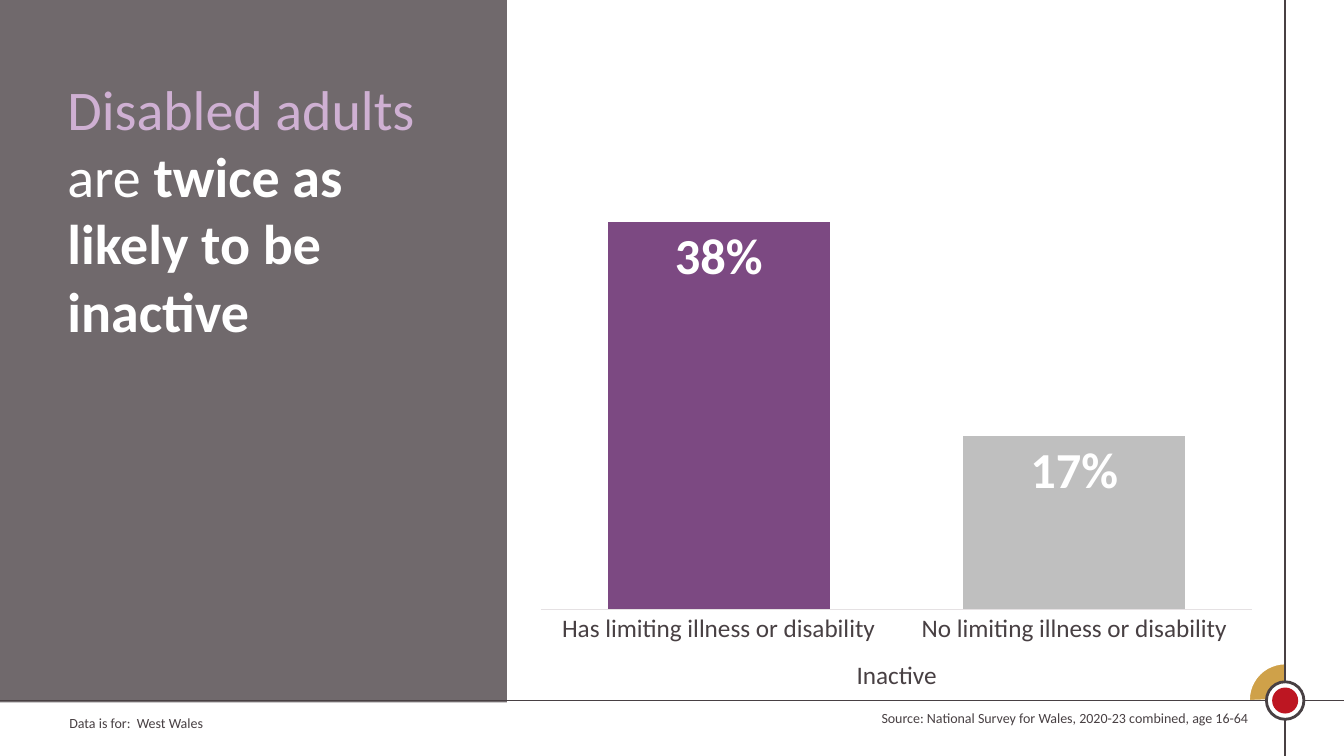
from lxml import etree
from pptx import Presentation, util as u
from pptx.chart.data import CategoryChartData
from pptx.dml.color import RGBColor
from pptx.enum import chart as ch, shapes as sh, text as tx
from pptx.oxml import parse_xml
from pptx.oxml.ns import nsdecls, qn

COLORS = {
    "ink": "484043", "white": "FFFFFF", "lilac": "CFB0D3", "purple": "7C4982",
    "grey": "BFBFBF", "gold": "CFA149", "red": "BD1622", "axis": "E5E1E3",
}
WIDTH, HEIGHT = 960, 540
CROSS_X, CROSS_Y = 918, 500.4  # where the two rules meet


class SlideBuilder:
    font_name = "Calibri"

    def __init__(self, slide):
        self.slide = slide

    def color(self, name):
        return RGBColor.from_string(COLORS[name])

    def style_font(self, font, size, color, bold=False):
        font.name = self.font_name
        font.size = u.Pt(size)
        font.bold = bold
        font.color.rgb = self.color(color)

    def shape(self, kind, box, fill, line=None, line_width=1, alpha=None, parent=None):
        item = (parent or self.slide).shapes.add_shape(kind, *map(u.Pt, box))
        item.shadow.inherit = False
        item.fill.solid()
        item.fill.fore_color.rgb = self.color(fill)
        if alpha:
            solid = item.element.spPr.find(qn("a:solidFill"))
            etree.SubElement(solid[0], qn("a:alpha"), val=str(alpha * 1000))
        if line:
            item.line.color.rgb = self.color(line)
            item.line.width = u.Pt(line_width)
        else:
            item.line.fill.background()
        return item

    def disc(self, group, diameter, fill, line=None):
        corner = CROSS_X - diameter / 2, CROSS_Y - diameter / 2
        self.shape(sh.MSO_SHAPE.OVAL, (*corner, diameter, diameter), fill, line, 2, parent=group)

    def rule(self, *ends):
        line = self.slide.shapes.add_connector(sh.MSO_CONNECTOR.STRAIGHT, *map(u.Pt, ends))
        line.line.color.rgb = self.color("ink")
        line.line.width = u.Pt(1)
        etree.SubElement(line.element.spPr, qn("a:effectLst"))

    def label(self, words, box, size, align=tx.PP_ALIGN.LEFT):
        frame = self.slide.shapes.add_textbox(*map(u.Pt, box)).text_frame
        frame.word_wrap = True
        frame.auto_size = tx.MSO_AUTO_SIZE.SHAPE_TO_FIT_TEXT
        paragraph = frame.paragraphs[0]
        paragraph.text = words
        paragraph.alignment = align
        self.style_font(paragraph.font, size, "ink")

    def title(self, parts, box):
        heading = self.slide.shapes.title
        heading.left, heading.top, heading.width, heading.height = map(u.Pt, box)
        # Bring the heading in front of the panel
        heading.element.getparent().append(heading.element)
        frame = heading.text_frame
        frame.word_wrap = True
        frame.auto_size = tx.MSO_AUTO_SIZE.NONE
        frame.vertical_anchor = tx.MSO_ANCHOR.TOP
        paragraph = frame.paragraphs[0]
        paragraph.alignment = tx.PP_ALIGN.LEFT
        for words, color, bold in parts:
            run = paragraph.add_run()
            run.text = words
            self.style_font(run.font, 40, color, bold)

    def column_chart(self, rates, bar_colors, box):
        data = CategoryChartData(number_format="0%")
        data.categories = list(rates)
        data.add_series("Series 1", list(rates.values()))
        chart = self.slide.shapes.add_chart(
            ch.XL_CHART_TYPE.COLUMN_CLUSTERED, *map(u.Pt, box), data).chart
        chart.has_legend = chart.has_title = False
        self.style_font(chart.font, 16, "ink")

        # Axes
        groups = chart.category_axis
        groups.major_tick_mark = ch.XL_TICK_MARK.NONE
        groups.format.line.color.rgb = self.color("axis")
        groups.format.line.width = u.Pt(0.75)
        self.style_font(groups.tick_labels.font, 18, "ink")
        share = chart.value_axis
        share.minimum_scale, share.maximum_scale = 0, 0.45
        share.has_major_gridlines = False
        share.visible = False
        share.tick_labels.number_format = "0.0%"
        share.tick_labels.number_format_is_linked = False

        # Bars and their values
        plot = chart.plots[0]
        plot.gap_width = 60
        plot.vary_by_categories = False
        series = plot.series[0]
        series.format.fill.solid()
        series.format.fill.fore_color.rgb = self.color(bar_colors[0])
        for index, name in enumerate(bar_colors[1:], 1):
            fill = series.points[index].format.fill
            fill.solid()
            fill.fore_color.rgb = self.color(name)
        labels = series.data_labels
        labels.show_value = True
        labels.position = ch.XL_LABEL_POSITION.INSIDE_END
        labels.number_format = "0%"
        labels.number_format_is_linked = False
        self.style_font(labels.font, 36, "white", True)

        # Plot area, as fractions of the chart
        area = chart.element.find(".//" + qn("c:plotArea"))
        for old in area.findall(qn("c:layout")):
            area.remove(old)
        area.insert(0, parse_xml(
            f'<c:layout {nsdecls("c")}><c:manualLayout><c:layoutTarget val="inner"/>'
            '<c:xMode val="edge"/><c:yMode val="edge"/><c:x val="0.02"/><c:y val="0.01"/>'
            '<c:w val="0.96"/><c:h val="0.9"/></c:manualLayout></c:layout>'))


def main():
    deck = Presentation()
    deck.slide_width, deck.slide_height = u.Pt(WIDTH), u.Pt(HEIGHT)
    page = SlideBuilder(deck.slides.add_slide(deck.slide_layouts[5]))

    # Footer, rules and emblem
    page.label("Data is for:\u00a0 West Wales".replace("\u00a0", " "), (42.5, 506.9, 316, 19.4), 10)
    quadrant = page.shape(sh.MSO_SHAPE.PIE, (892.1, 473.8, 51.8, 51.8), "gold", "white", 1.5)
    quadrant.adjustments[0], quadrant.adjustments[1] = 106.617, 162
    page.rule(CROSS_X, 0, CROSS_X, HEIGHT)
    page.rule(0, CROSS_Y, WIDTH, CROSS_Y)
    emblem = page.slide.shapes.add_group_shape()
    page.disc(emblem, 26.8, "white", "ink")
    page.disc(emblem, 18.6, "red")

    # Heading panel and source
    page.shape(sh.MSO_SHAPE.RECTANGLE, (-0.7, 0, 362.9, 501.8), "ink", alpha=78)
    page.label("Source: National Survey for Wales, 2020-23 combined, age 16-64",
               (599, 503.3, 299.5, 19.4), 10, tx.PP_ALIGN.RIGHT)
    page.title([("Disabled adults ", "lilac", False), ("are ", "white", False),
                ("twice as likely to be inactive", "white", True)], (41, 49.7, 300.2, 271.4))

    # Inactivity chart
    page.label("Inactive", (604.8, 467.3, 87.8, 28.8), 18)
    page.column_chart({"Has limiting illness or disability": 0.38,
                       "No limiting illness or disability": 0.17},
                      ["purple", "grey"], (375.8, 104.4, 529.2, 363.6))
    deck.save("out.pptx")


if __name__ == "__main__":
    main()
